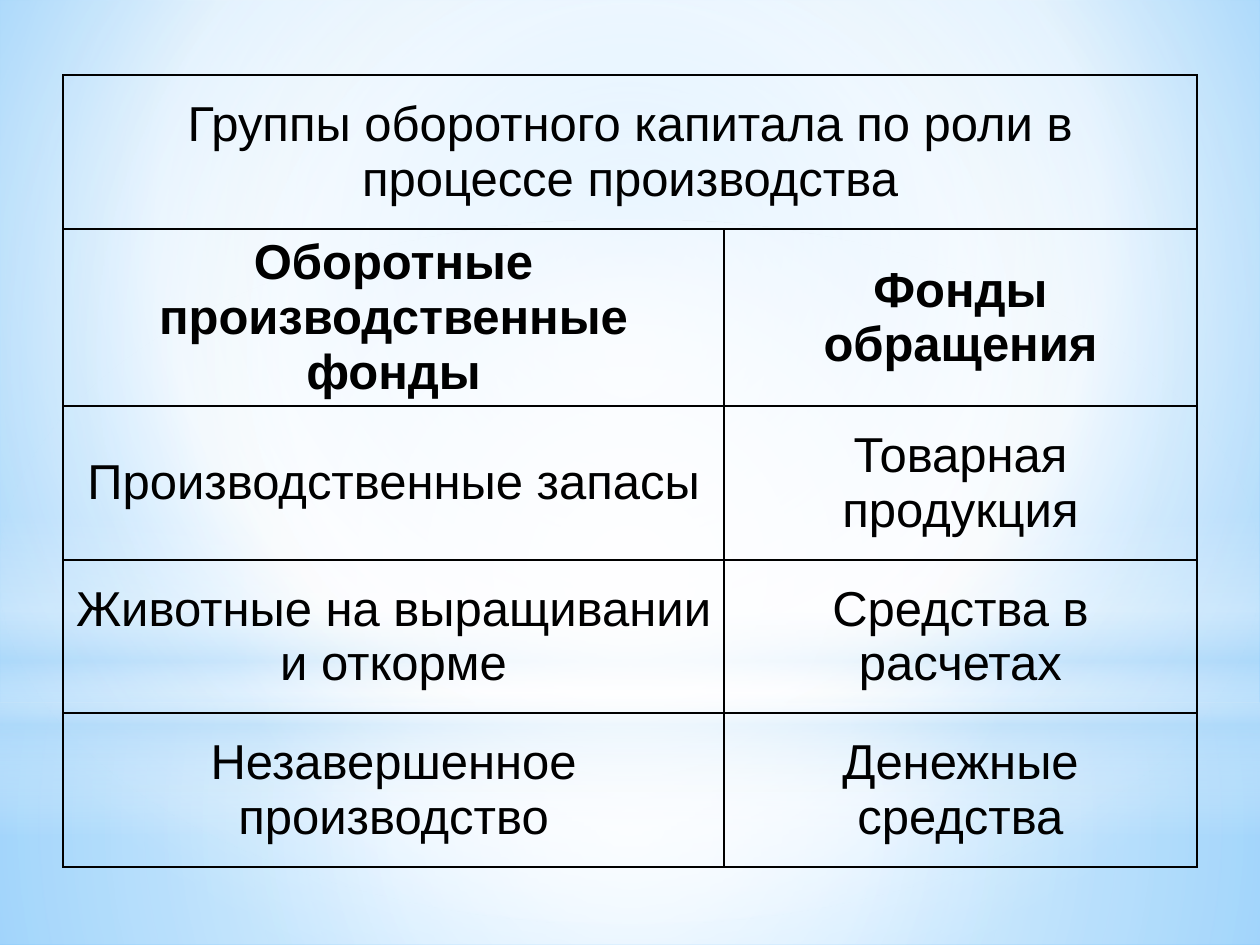
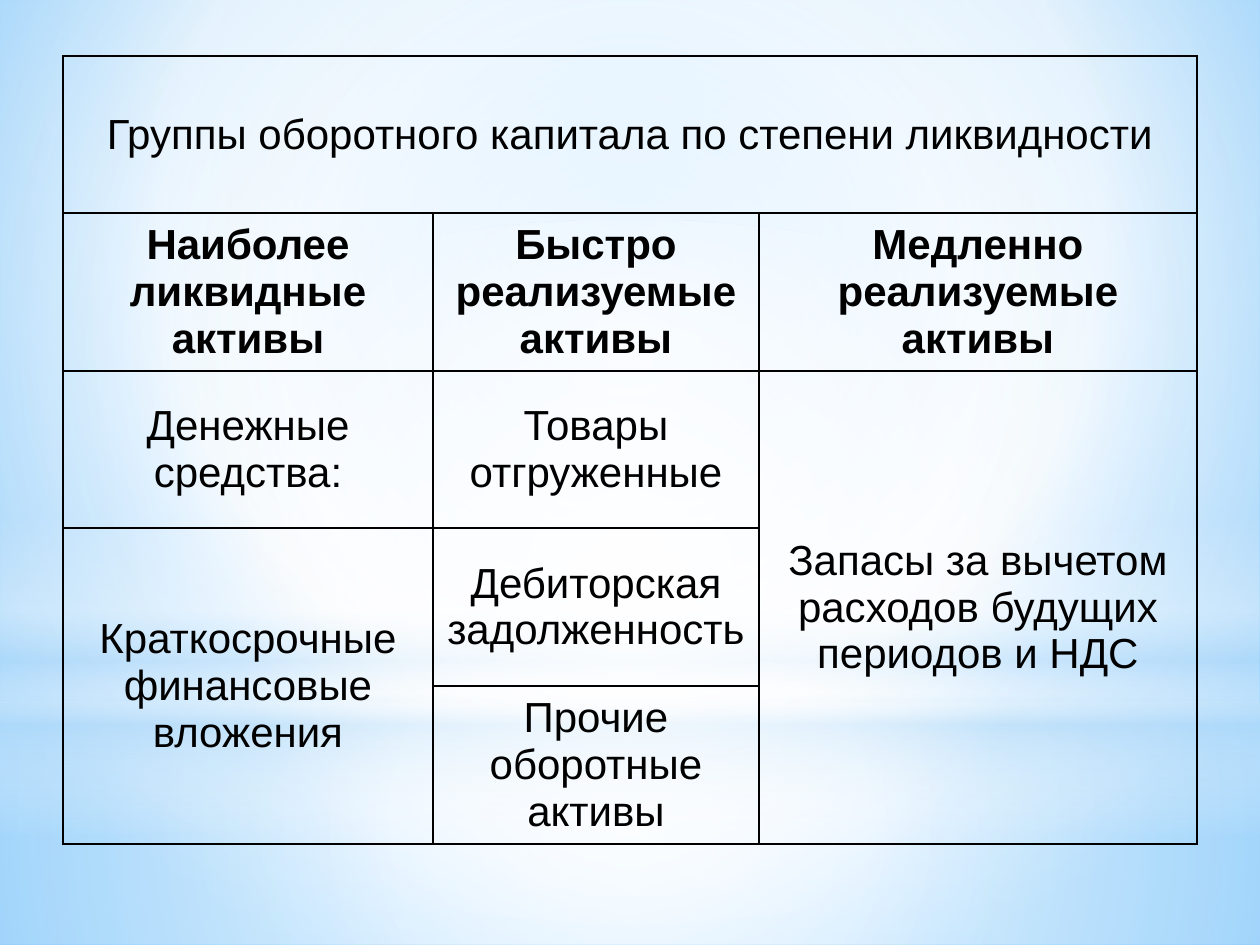
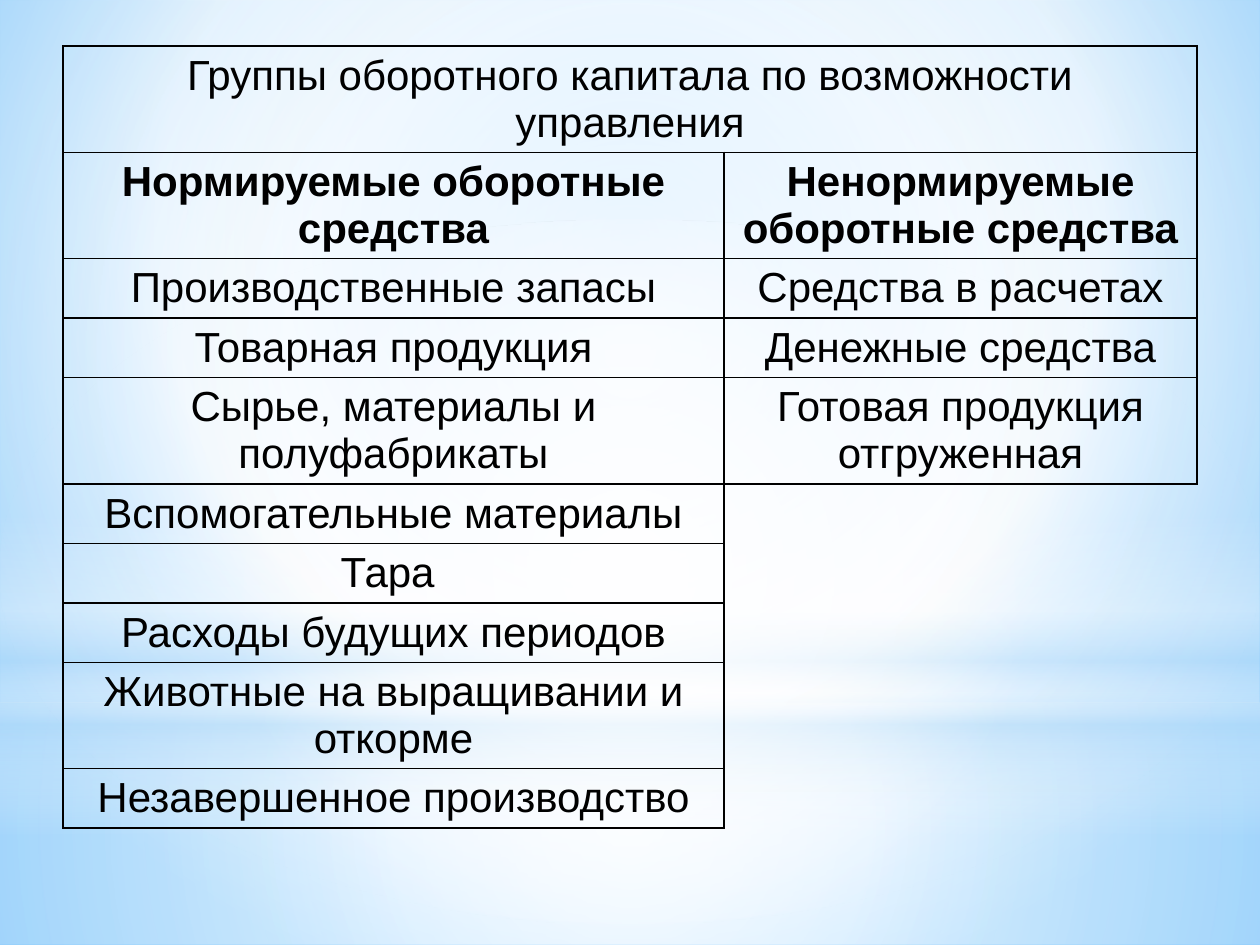
"""Builds three table slides on the groups of working capital."""
from dataclasses import dataclass

from lxml import etree
from pptx import Presentation
from pptx.dml.color import RGBColor
from pptx.enum.shapes import MSO_SHAPE
from pptx.enum.text import MSO_ANCHOR, PP_ALIGN
from pptx.oxml.ns import qn
from pptx.util import Emu, Pt

RECT, OVAL = MSO_SHAPE.RECTANGLE, MSO_SHAPE.OVAL
CENTER, MIDDLE = PP_ALIGN.CENTER, MSO_ANCHOR.MIDDLE


@dataclass(frozen=True)
class Theme:
    font: str = "Arial"
    large: int = 28
    normal: int = 24
    ink: str = "000000"
    border: int = 1
    white: str = "FFFFFF"
    haze: str = "B4DCFA"
    sky: str = "9ED5FF"
    deep: str = "5BB9FF"


T = Theme()


def px(n):
    return Emu(round(n * 914400 / 126))


def set_gradient(props, stops, focus):
    grad = etree.Element(qn("a:gradFill"), rotWithShape="1")
    gs_list = etree.SubElement(grad, qn("a:gsLst"))
    for pos, color, alpha in stops:
        gs = etree.SubElement(gs_list, qn("a:gs"), pos=str(pos * 1000))
        clr = etree.SubElement(gs, qn("a:srgbClr"), val=color)
        if alpha < 100:
            etree.SubElement(clr, qn("a:alpha"), val=str(alpha * 1000))
    if focus:
        way = etree.SubElement(grad, qn("a:path"), {"path": "circle"})
        rect = {k: str(v * 1000) for k, v in zip("ltrb", focus)}
        etree.SubElement(way, qn("a:fillToRect"), rect)
    else:
        etree.SubElement(grad, qn("a:lin"), ang="5400000", scaled="0")
    props.replace(props.find(qn("a:noFill")), grad)


prs = Presentation()
prs.slide_width, prs.slide_height = px(1260), px(945)
master, blank = prs.slide_master, prs.slide_layouts[6]
slides = [prs.slides.add_slide(blank) for _ in range(3)]

master.background.fill.background()
set_gradient(master.element.xpath("p:cSld/p:bg/p:bgPr")[0],
             [(0, T.sky, 100), (60, T.white, 100), (100, T.deep, 100)],
             (20, 10, 20, 60))

MID = (50, 50, 50, 50)
glows = [
    (RECT, 703, 242, MID,
     [(0, T.white, 91), (37, T.white, 76), (100, T.haze, 79)]),
    (RECT, 0, 703, MID,
     [(0, T.white, 89), (48, T.white, 62), (100, T.haze, 79)]),
    (RECT, 519, 315, None,
     [(0, T.white, 1), (29, T.white, 30), (45, T.haze, 40),
      (55, T.white, 26), (65, T.haze, 60), (100, T.white, 1)]),
    (OVAL, 220, 703, MID,
     [(0, T.white, 100), (56, T.white, 1)]),
]
for i, (kind, top, height, focus, stops) in enumerate(glows):
    sp = slides[0].shapes.add_shape(kind, 0, px(top), prs.slide_width, px(height))
    sp.shadow.inherit = False
    sp.line.fill.background()
    sp.fill.background()
    el = sp.element
    set_gradient(el.spPr, stops, focus)
    el.nvSpPr.cNvPr.set("id", str(20 + i))
    master.shapes.element.insert(2 + i, el)

tables = [
    dict(top=75, size=T.large,
         cols=[661, 473], rows=[154, 177, 154, 153, 154],
         merges=[(0, 0, 0, 1)], open_from=None, cells=[
             ["Группы оборотного капитала по роли в процессе производства", None],
             ["Оборотные производственные фонды", "Фонды обращения"],
             ["Производственные запасы", "Товарная продукция"],
             ["Животные на выращивании и откорме", "Средства в расчетах"],
             ["Незавершенное производство", "Денежные средства"]]),
    dict(top=56, size=T.normal,
         cols=[370, 326, 438], rows=[157, 158, 157, 158, 158],
         merges=[(0, 0, 0, 2), (2, 2, 4, 2), (3, 0, 4, 0)], open_from=None, cells=[
             ["Группы оборотного капитала по степени ликвидности", None, None],
             ["Наиболее ликвидные активы", "Быстро реализуемые активы",
              "Медленно реализуемые активы"],
             ["Денежные средства:", "Товары отгруженные",
              "Запасы за вычетом расходов будущих периодов и НДС"],
             ["Краткосрочные финансовые вложения", "Дебиторская задолженность", None],
             [None, "Прочие оборотные активы", None]]),
    dict(top=46, size=T.normal,
         cols=[661, 473], rows=[106, 106, 59, 59, 106, 59, 59, 59, 106, 59],
         merges=[(0, 0, 0, 1), (5, 1, 9, 1)], open_from=5, cells=[
             ["Группы оборотного капитала по возможности управления", None],
             ["Нормируемые оборотные средства", "Ненормируемые оборотные средства"],
             ["Производственные запасы", "Средства в расчетах"],
             ["Товарная продукция", "Денежные средства"],
             ["Сырье, материалы и полуфабрикаты", "Готовая продукция отгруженная"],
             ["Вспомогательные материалы", None],
             ["Тара ", None],
             ["Расходы будущих периодов", None],
             ["Животные на выращивании и откорме", None],
             ["Незавершенное производство", None]]),
]

for s, data in zip(slides, tables):
    cols, rows = data["cols"], data["rows"]
    frame = s.shapes.add_table(len(rows), len(cols), px(63), px(data["top"]),
                               px(sum(cols)), px(sum(rows)))
    tbl = frame.table
    tbl.first_row = tbl.horz_banding = False
    for col, width in zip(tbl.columns, cols):
        col.width = px(width)
    for row, height in zip(tbl.rows, rows):
        row.height = px(height)
    for r1, c1, r2, c2 in data["merges"]:
        tbl.cell(r1, c1).merge(tbl.cell(r2, c2))

    open_from = data["open_from"]
    for i, texts in enumerate(data["cells"]):
        for j, text in enumerate(texts):
            cell = tbl.cell(i, j)
            cell.fill.background()
            cell.vertical_anchor = MIDDLE
            is_open = open_from is not None and i >= open_from and j == 1
            tc_pr = cell._tc.get_or_add_tcPr()
            for k, edge in enumerate("LRTB"):
                ln = etree.Element(qn("a:ln" + edge), w=str(Pt(T.border)))
                if is_open and edge in "RB":
                    etree.SubElement(ln, qn("a:noFill"))
                else:
                    fill = etree.SubElement(ln, qn("a:solidFill"))
                    etree.SubElement(fill, qn("a:srgbClr"), val=T.ink)
                tc_pr.insert(k, ln)
            if text is None:
                continue
            p = cell.text_frame.paragraphs[0]
            p.text = text
            p.alignment = CENTER
            font = p.runs[0].font
            font.name, font.size, font.bold = T.font, Pt(data["size"]), i == 1
            font.color.rgb = RGBColor.from_string(T.ink)

prs.save("out.pptx")
